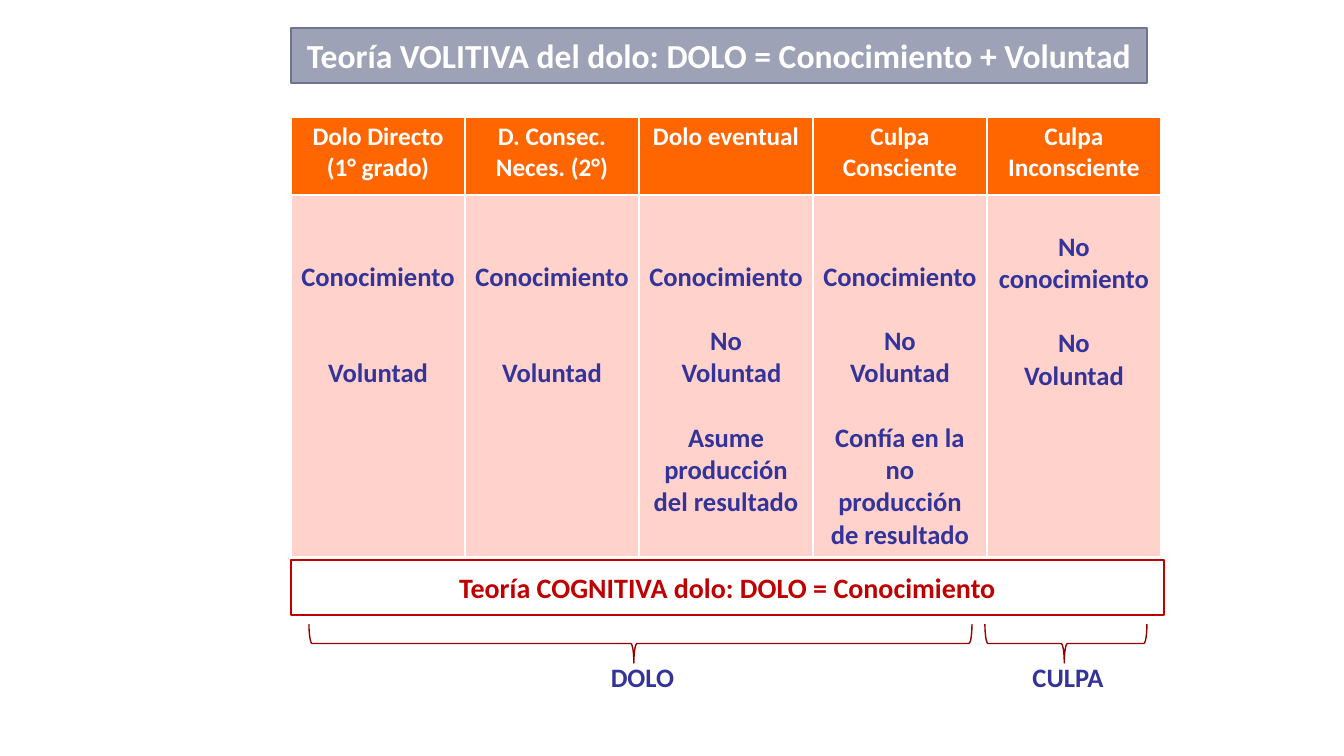
from lxml.etree import SubElement
from pptx import Presentation
from pptx.dml.color import RGBColor
from pptx.enum.shapes import MSO_SHAPE
from pptx.enum.text import MSO_ANCHOR, MSO_AUTO_SIZE, PP_ALIGN
from pptx.oxml.ns import qn
from pptx.util import Pt

EMU_PER_PX = 914400 / 100.8
FONT = "Calibri"
WHITE = RGBColor(0xFF, 0xFF, 0xFF)
ORANGE = RGBColor(0xFF, 0x66, 0x00)
PINK = RGBColor(0xFF, 0xD3, 0xCC)
INDIGO = RGBColor(0x33, 0x33, 0x99)
GREY = RGBColor(0x9E, 0xA2, 0xB6)
DARK_GREY = RGBColor(0x6E, 0x74, 0x92)
RED = RGBColor(0xC0, 0x00, 0x00)
DARK_RED = RGBColor(0x96, 0x00, 0x00)

LINE_POINTS = 23  # height of one line of body text
CELL_MARGIN = 5
HEADER_HEIGHT = 78

# Each column: heading, top margin in px, and paragraphs as
# (text, blank lines before it, left indent in px)
COLUMNS = [
    ("Dolo Directo (1° grado)", 66,
     [("Conocimiento", 0, 0), ("Voluntad", 2, 0)]),
    ("D. Consec. Neces. (2°)", 66,
     [("Conocimiento", 0, 0), ("Voluntad", 2, 0)]),
    ("Dolo eventual", 66,
     [("Conocimiento", 0, 0), ("No", 1, 0), ("Voluntad", 0, 11),
      ("Asume producción del resultado", 1, 0)]),
    ("Culpa Consciente", 66,
     [("Conocimiento", 0, 0), ("No", 1, 0), ("Voluntad", 0, 0),
      ("Confía en la no producción de resultado", 1, 0)]),
    ("Culpa Inconsciente", 36,
     [("No conocimiento", 0, 0), ("No", 1, 0), ("Voluntad", 0, 0)]),
]


def px(length):
    return round(length * EMU_PER_PX)


def write(paragraph, text, size=19, color=INDIGO, space_before=0, indent=0):
    paragraph.alignment = PP_ALIGN.CENTER
    paragraph.space_before = Pt(space_before)
    if indent:
        paragraph._p.get_or_add_pPr().set("marL", str(px(indent)))
    run = paragraph.add_run()
    run.text = text
    run.font.name = FONT
    run.font.size = Pt(size)
    run.font.bold = True
    run.font.color.rgb = color


def add_borders(cell):
    properties = cell._tc.get_or_add_tcPr()
    for position, side in enumerate(("lnL", "lnR", "lnT", "lnB")):
        line = SubElement(properties, qn(f"a:{side}"), w=str(Pt(1)))
        fill = SubElement(line, qn("a:solidFill"))
        SubElement(fill, qn("a:srgbClr"), val=str(WHITE))
        properties.insert(position, line)


def format_banner(shape, text, fill, outline, color, size):
    shape.fill.solid()
    shape.fill.fore_color.rgb = fill
    shape.line.color.rgb = outline
    shape.line.width = Pt(2)
    frame = shape.text_frame
    frame.word_wrap = True
    frame.auto_size = MSO_AUTO_SIZE.NONE
    frame.vertical_anchor = MSO_ANCHOR.MIDDLE
    write(frame.paragraphs[0], text, size=size, color=color)


def place_title(slide, left, top, width, height):
    title = slide.shapes.title
    title.left, title.top = px(left), px(top)
    title.width, title.height = px(width), px(height)
    format_banner(title, "Teoría VOLITIVA del dolo: DOLO = Conocimiento + Voluntad",
                  GREY, DARK_GREY, WHITE, 24)


def add_comparison(slide, left, top, width, height):
    table = slide.shapes.add_table(
        2, len(COLUMNS), px(left), px(top), px(width), px(height)).table
    table.rows[0].height = px(HEADER_HEIGHT)
    table.rows[1].height = px(height - HEADER_HEIGHT)
    for index, (heading, top_margin, lines) in enumerate(COLUMNS):
        table.columns[index].width = px(width / len(COLUMNS))
        header, body = table.cell(0, index), table.cell(1, index)
        for cell, color, margin in ((header, ORANGE, CELL_MARGIN),
                                    (body, PINK, top_margin)):
            cell.margin_left = cell.margin_right = px(10)
            cell.margin_top, cell.margin_bottom = px(margin), px(CELL_MARGIN)
            cell.fill.solid()
            cell.fill.fore_color.rgb = color
            add_borders(cell)
        write(header.text_frame.paragraphs[0], heading, size=18, color=WHITE)
        frame = body.text_frame
        for number, (text, blank_lines, indent) in enumerate(lines):
            paragraph = frame.add_paragraph() if number else frame.paragraphs[0]
            write(paragraph, text, space_before=blank_lines * LINE_POINTS,
                  indent=indent)


def add_cognitive_banner(slide, left, top, width, height):
    banner = slide.shapes.add_shape(
        MSO_SHAPE.RECTANGLE, px(left), px(top), px(width), px(height))
    banner.shadow.inherit = False
    format_banner(banner, "Teoría COGNITIVA dolo: DOLO = Conocimiento",
                  WHITE, RED, RED, 20)


def add_group_brace(slide, text, left, top, width, height):
    # Brace turned to point down: its sides are swapped around the centre
    center_x, center_y = left + width / 2, top + height / 2
    brace = slide.shapes.add_shape(
        MSO_SHAPE.LEFT_BRACE, px(center_x - height / 2),
        px(center_y - width / 2), px(height), px(width))
    brace.rotation = 270
    brace.adjustments[0], brace.adjustments[1] = 0.08, 0.49
    brace.shadow.inherit = False
    brace.fill.background()
    brace.line.color.rgb = DARK_RED
    brace.line.width = Pt(1)
    # Label under the tip
    label_width = 150
    label = slide.shapes.add_textbox(
        px(center_x - label_width / 2 + 2), px(top + height - 7),
        px(label_width), px(42))
    label.text_frame.word_wrap = True
    write(label.text_frame.paragraphs[0], text)


def main():
    presentation = Presentation()
    presentation.slide_width, presentation.slide_height = px(1344), px(756)
    slide = presentation.slides.add_slide(presentation.slide_layouts[5])
    place_title(slide, 291, 28, 856, 55)
    add_comparison(slide, 291, 117, 870, 440)
    add_cognitive_banner(slide, 291, 560, 873, 55)
    add_group_brace(slide, "DOLO", 309, 624, 663, 39)
    add_group_brace(slide, "CULPA", 985, 624, 162, 39)
    presentation.save("out.pptx")


if __name__ == "__main__":
    main()
